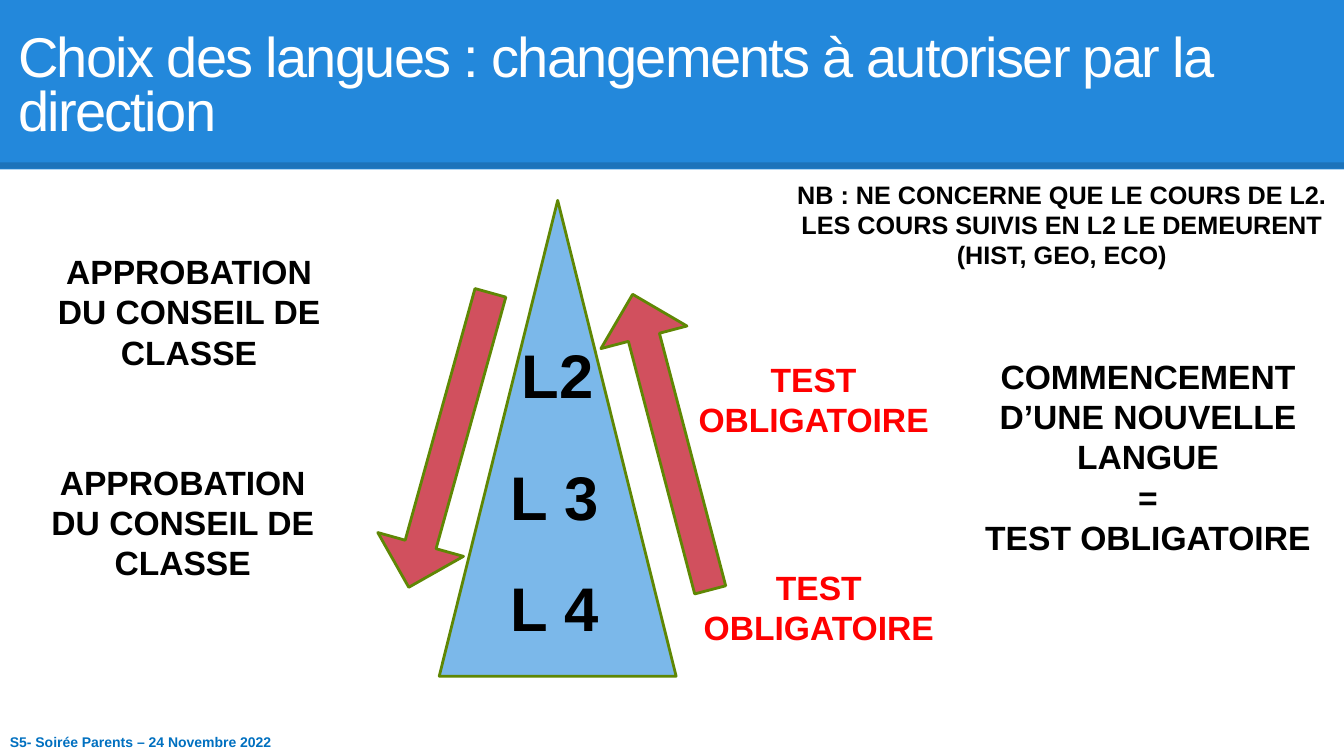
from dataclasses import dataclass

from lxml import etree
from pptx import Presentation
from pptx.dml.color import RGBColor
from pptx.enum import shapes, text
from pptx.oxml import ns
from pptx.util import Cm, Pt


@dataclass(frozen=True)
class Theme:
    font: str = "Arial"
    band: str = "2388DB"
    pyramid: str = "7BB8EA"
    arrow: str = "D1505E"
    outline: str = "5F8704"
    white: str = "FFFFFF"
    black: str = "000000"
    red: str = "FF0000"
    footer: str = "0070C0"
    level_size: int = 44
    title_size: int = 40
    body_size: int = 24
    note_size: int = 18
    footer_size: int = 10


theme = Theme()
LEFT, CENTER = text.PP_ALIGN.LEFT, text.PP_ALIGN.CENTER
TOP, MIDDLE = text.MSO_ANCHOR.TOP, text.MSO_ANCHOR.MIDDLE

presentation = Presentation()
presentation.slide_width, presentation.slide_height = Cm(33.87), Cm(19.05)
slide = presentation.slides.add_slide(presentation.slide_layouts[5])


def add_filled_shape(kind, box, fill, outline=None):
    shape = slide.shapes.add_shape(kind, *map(Cm, box))
    shape.shadow.inherit = False
    shape.fill.solid()
    shape.fill.fore_color.rgb = RGBColor.from_string(fill)
    if outline:
        shape.line.color.rgb = RGBColor.from_string(outline)
        shape.line.width = Pt(2)
    else:
        shape.line.fill.background()
    return shape


def write(shape, lines, size, color, alignment=CENTER, anchor=TOP, bold=True):
    frame = shape.text_frame
    frame.text = lines
    frame_format = {"word_wrap": True, "auto_size": text.MSO_AUTO_SIZE.NONE,
                    "vertical_anchor": anchor}
    for name, value in frame_format.items():
        setattr(frame, name, value)
    for paragraph in frame.paragraphs:
        paragraph.alignment = alignment
        for run in paragraph.runs:
            run_format = {"name": theme.font, "size": Pt(size), "bold": bold}
            for name, value in run_format.items():
                setattr(run.font, name, value)
            run.font.color.rgb = RGBColor.from_string(color)


# Title band with its translucent lower edge
add_filled_shape(shapes.MSO_SHAPE.RECTANGLE, (0, 0, 33.87, 4.27), theme.band)
edge = slide.shapes.add_connector(shapes.MSO_CONNECTOR.STRAIGHT,
                                  0, Cm(4.17), Cm(33.87), Cm(4.17))
edge.line.width = Pt(4.5)
edge.line.color.rgb = RGBColor.from_string(theme.black)
edge_properties = edge.element.spPr
edge_color = edge_properties.find(".//" + ns.qn("a:srgbClr"))
etree.SubElement(edge_color, ns.qn("a:alpha"), val="15000")
etree.SubElement(edge_properties, ns.qn("a:effectLst"))

title = slide.shapes.title
title.left, title.top, title.width, title.height = map(Cm, (0.2, 0.03, 32.69, 3.68))
write(title, "Choix des langues : changements à autoriser par la direction",
      theme.title_size, theme.white, LEFT, text.MSO_ANCHOR.BOTTOM, bold=False)
title_paragraph = title.text_frame.paragraphs[0]
title_paragraph.line_spacing = 0.8
title_paragraph.runs[0].font._element.set("spc", "-120")
title.element.getparent().append(title.element)  # bring the title above its band

# Pyramid of language levels
add_filled_shape(shapes.MSO_SHAPE.ISOSCELES_TRIANGLE, (11.07, 5.05, 5.97, 11.99),
                 theme.pyramid, theme.outline)

approval = "APPROBATION DU CONSEIL DE CLASSE"
test = "TEST OBLIGATOIRE"
new_language = f"COMMENCEMENT D’UNE NOUVELLE LANGUE\n=\n{test}"
note = ("NB : NE CONCERNE QUE LE COURS DE L2. "
        "LES COURS SUIVIS EN L2 LE DEMEURENT (HIST, GEO, ECO)")
level_style = (theme.level_size, theme.black, CENTER, MIDDLE)
body_style = (theme.body_size, theme.black)
test_style = (theme.body_size, theme.red)

text_boxes = [
    ("L2", (12.5, 8.36, 3.12, 2.13), level_style),
    ("L 3", (12.42, 11.43, 3.12, 2.13), level_style),
    ("L 4", (12.42, 14.22, 3.12, 2.13), level_style),
    (new_language, (24.28, 8.84, 9.3, 5.38), body_style),
    (test, (17.2, 14.15, 6.87, 3.33), test_style),
    (test, (17.07, 8.92, 6.87, 3.33), test_style),
    (approval, (0.81, 11.51, 7.59, 3.33), body_style),
    (approval, (0.97, 6.2, 7.59, 3.33), body_style),
    (note, (19.76, 4.39, 14, 2.57), (theme.note_size, theme.black)),
    ("S5- Soirée Parents – 24 Novembre 2022", (0, 18.36, 8.71, 0.69),
     (theme.footer_size, theme.footer, LEFT)),
]
for lines, box, style in text_boxes:
    write(slide.shapes.add_textbox(*map(Cm, box)), lines, *style)

# Arrows up and down the sides of the pyramid
for left, top, rotation in [(15.8, 7.29, 165.3), (10.21, 7.24, 15.5)]:
    arrow = add_filled_shape(shapes.MSO_SHAPE.DOWN_ARROW, (left, top, 2.24, 7.7),
                             theme.arrow, theme.outline)
    arrow.rotation = rotation
    arrow.adjustments[0] = 0.36
    arrow.adjustments[1] = 0.5

presentation.save("out.pptx")
